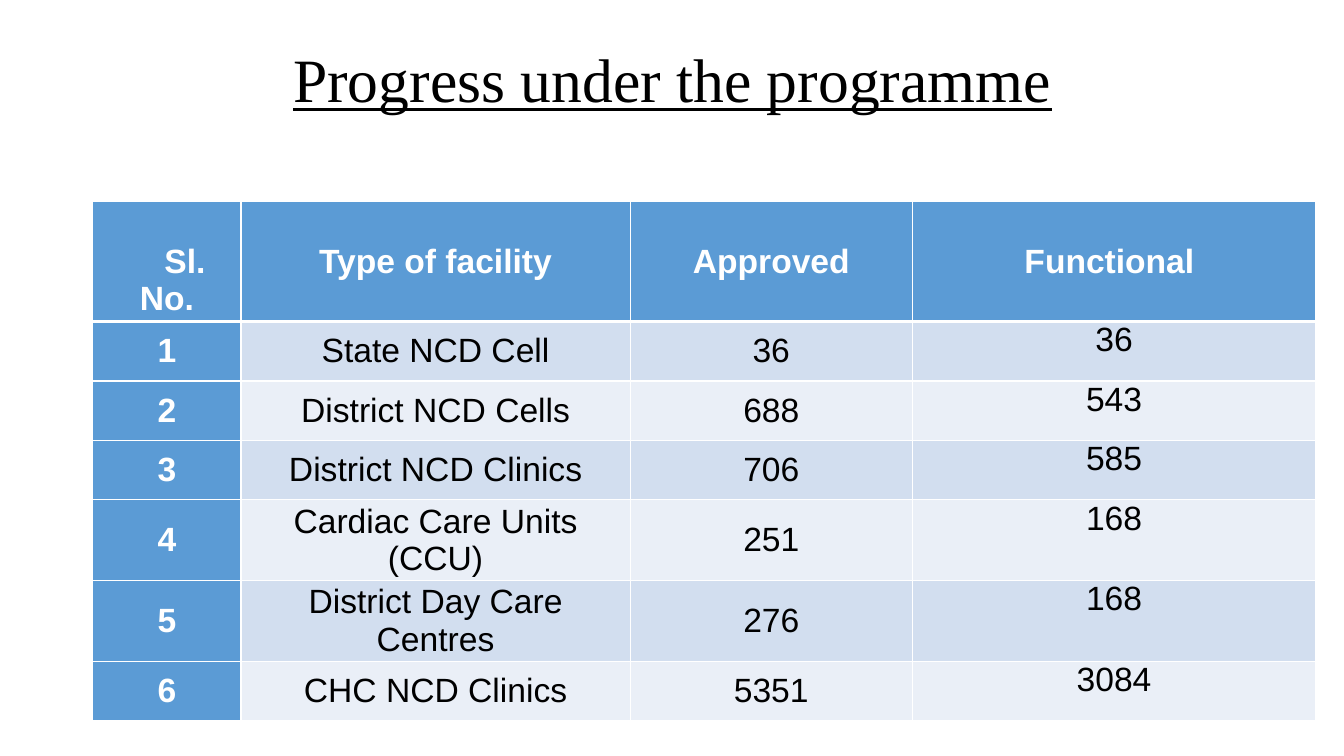
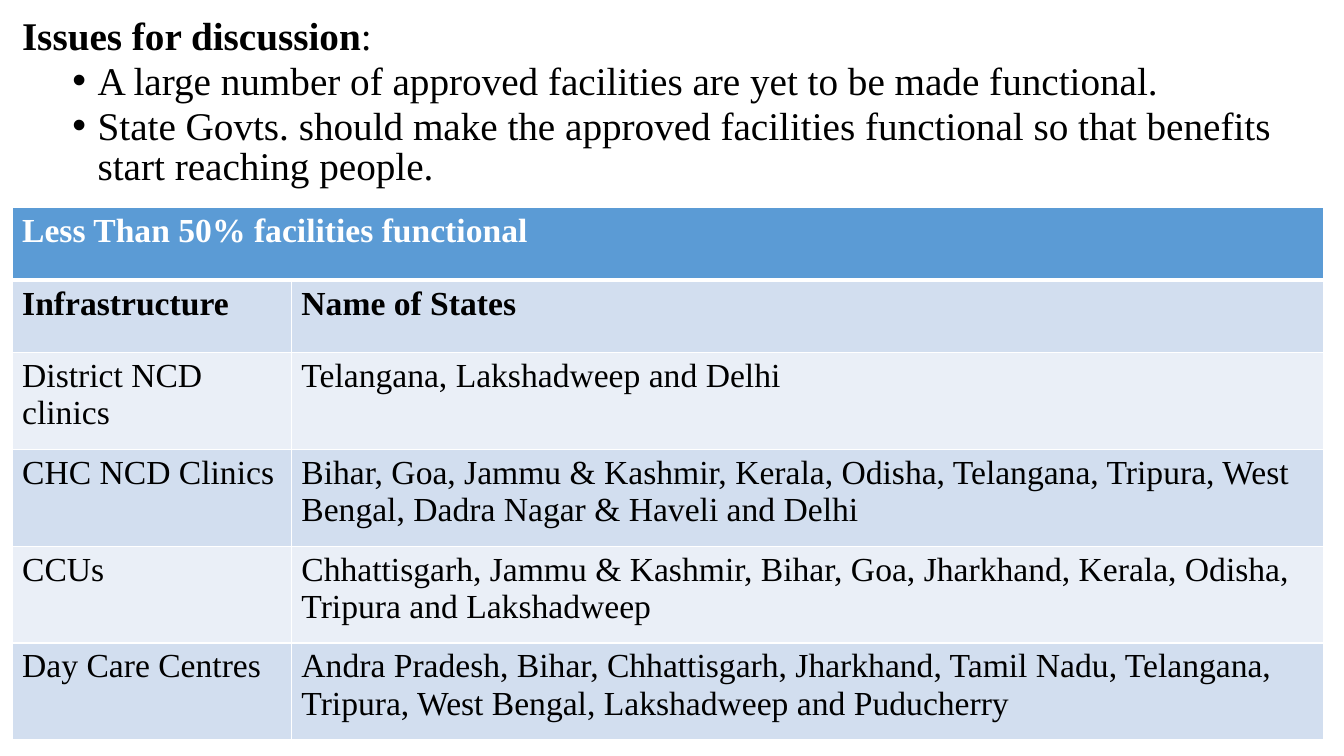
from dataclasses import dataclass

from lxml import etree
from pptx import Presentation
from pptx import util as u
from pptx.dml.color import RGBColor
from pptx.enum import text
from pptx.oxml.ns import qn

PX = 9144  # EMU in one px, 100 px to the inch
WHITE = RGBColor(0xFF, 0xFF, 0xFF)
BLACK = RGBColor(0x00, 0x00, 0x00)
BLUE = RGBColor(0x5B, 0x9B, 0xD5)
BANDS = (RGBColor(0xD2, 0xDE, 0xEF), RGBColor(0xEA, 0xEF, 0xF7))
SERIF = "Times New Roman"
SANS = "Arial"
LEFT, CENTER = text.PP_ALIGN.LEFT, text.PP_ALIGN.CENTER
TOP, MIDDLE = text.MSO_ANCHOR.TOP, text.MSO_ANCHOR.MIDDLE


@dataclass(frozen=True)
class Grid:
    x: int
    y: int
    cols: tuple[int, ...]
    rows: tuple[int, ...]
    cells: tuple[tuple[str, ...], ...]
    font: str
    align: text.PP_ALIGN = LEFT
    inset_x: int = 10
    inset_y: int = 5
    blue_cols: int = 0  # leading columns styled like the header row
    bold_rows: int = 1  # leading rows in bold
    middle_cols: int = 0  # leading columns whose text is vertically centred


FACILITIES = Grid(
    92, 200, (147, 386, 280, 400), (119,) + (59,) * 6,
    (
        ("Sl. No.", "Type of facility", "Approved", "Functional "),
        ("1", "State NCD Cell", "36", "36"),
        ("2", "District NCD Cells", "688", "543"),
        ("3", "District NCD Clinics", "706", "585"),
        ("4", "Cardiac Care Units (CCU)", "251", "168"),
        ("5", "District Day Care Centres", "276", "168"),
        ("6", "CHC NCD Clinics", "5351", "3084"),
    ),
    SANS, CENTER, inset_x=7, inset_y=0, blue_cols=1, middle_cols=3,
)

STATES = Grid(
    12, 206, (277, 1024), (72, 72) + (96,) * 4,
    (
        ("Less Than 50% facilities functional", ""),
        ("Infrastructure", "Name of States"),
        ("District NCD clinics", "Telangana, Lakshadweep and Delhi"),
        ("CHC NCD Clinics",
         "Bihar, Goa, Jammu & Kashmir, Kerala, Odisha, Telangana, Tripura, "
         "West Bengal, Dadra Nagar & Haveli and Delhi"),
        ("CCUs",
         "Chhattisgarh, Jammu & Kashmir, Bihar, Goa, Jharkhand, Kerala, "
         "Odisha, Tripura and Lakshadweep"),
        ("Day Care Centres",
         "Andra Pradesh, Bihar, Chhattisgarh, Jharkhand, Tamil Nadu, "
         "Telangana, Tripura, West Bengal, Lakshadweep and Puducherry"),
    ),
    SERIF, bold_rows=2,
)

ISSUES = (
    "A large number of approved facilities are yet to be made functional.",
    "State Govts. should make the approved facilities functional so that "
    "benefits start reaching people.",
)


def px(n: int) -> u.Emu:
    return u.Emu(n * PX)


def style_runs(p, font: str, size: int, color: RGBColor, bold: bool = False) -> None:
    for r in p.runs:
        r.font.name, r.font.size, r.font.bold = font, u.Pt(size), bold
        r.font.color.rgb = color


def set_indent(p, left: int, first: int) -> None:
    pPr = p._p.get_or_add_pPr()
    pPr.set("marL", str(px(left)))
    pPr.set("indent", str(px(first)))


def set_borders(cell, **widths: int) -> None:
    """Draw white cell borders, with widths in points by side (L, R, T, B)."""
    tcPr = cell._tc.get_or_add_tcPr()
    for side, width in widths.items():
        ln = etree.SubElement(tcPr, qn(f"a:ln{side}"), w=str(u.Pt(width)))
        fill = etree.SubElement(ln, qn("a:solidFill"))
        etree.SubElement(fill, qn("a:srgbClr"), val=str(WHITE))


def add_text_box(s, x: int, y: int, w: int, h: int):
    tf = s.shapes.add_textbox(px(x), px(y), px(w), px(h)).text_frame
    tf.word_wrap = True
    return tf


def add_grid(s, grid: Grid):
    frame = s.shapes.add_table(
        len(grid.rows), len(grid.cols), px(grid.x), px(grid.y),
        px(sum(grid.cols)), px(sum(grid.rows)))
    table = frame.table
    table.horz_banding = False
    for col, width in zip(table.columns, grid.cols):
        col.width = px(width)
    for row, height in zip(table.rows, grid.rows):
        row.height = px(height)
    for i, values in enumerate(grid.cells):
        for j, value in enumerate(values):
            cell = table.cell(i, j)
            blue = i == 0 or j < grid.blue_cols
            set_borders(cell, L=1, R=1, T=3 if i == 1 else 1, B=3 if i == 0 else 1)
            cell.fill.solid()
            cell.fill.fore_color.rgb = BLUE if blue else BANDS[(i - 1) % 2]
            cell.margin_left = cell.margin_right = px(grid.inset_x)
            cell.margin_top = cell.margin_bottom = px(grid.inset_y)
            centred = j < grid.middle_cols or (i == 0 and grid.middle_cols > 0)
            cell.vertical_anchor = MIDDLE if centred else TOP
            cell.text_frame.text = value
            p = cell.text_frame.paragraphs[0]
            p.alignment = grid.align
            bold = i < grid.bold_rows or j < grid.blue_cols
            style_runs(p, grid.font, 24, WHITE if blue else BLACK, bold)
    return table


def build_progress(s) -> None:
    tf = add_text_box(s, 92, 40, 1150, 145)
    tf.margin_top = px(9)
    tf.text = "Progress under the programme"
    p = tf.paragraphs[0]
    p.alignment, p.line_spacing = CENTER, 0.9
    style_runs(p, SERIF, 44, BLACK)
    p.runs[0].font.underline = True

    number_head = add_grid(s, FACILITIES).cell(0, 0)
    number_head.margin_top = px(37)
    set_indent(number_head.text_frame.paragraphs[0], 0, 36)


def build_issues(s) -> None:
    tf = add_text_box(s, 12, 14, 1301, 191)
    heading = tf.paragraphs[0]
    for part in ("Issues for discussion", ":"):
        heading.add_run().text = part
    style_runs(heading, SERIF, 28, BLACK)
    heading.runs[0].font.bold = True
    for issue in ISSUES:
        p = tf.add_paragraph()
        p.text = issue
        p.level = 1
        p.space_before = u.Pt(4)
        style_runs(p, SERIF, 28, BLACK)
        set_indent(p, 75, -25)
    for p in tf.paragraphs:
        p.line_spacing = 0.84
    for p in tf.paragraphs[1:]:
        pPr = p._p.get_or_add_pPr()
        etree.SubElement(pPr, qn("a:buFont"), typeface=SANS)
        etree.SubElement(pPr, qn("a:buChar"), char="•")

    table = add_grid(s, STATES)
    table.cell(0, 0).merge(table.cell(0, 1))


def main() -> None:
    prs = Presentation()
    prs.slide_width, prs.slide_height = px(1333), px(750)
    for build in (build_progress, build_issues):
        build(prs.slides.add_slide(prs.slide_layouts[6]))
    prs.save("out.pptx")


if __name__ == "__main__":
    main()
